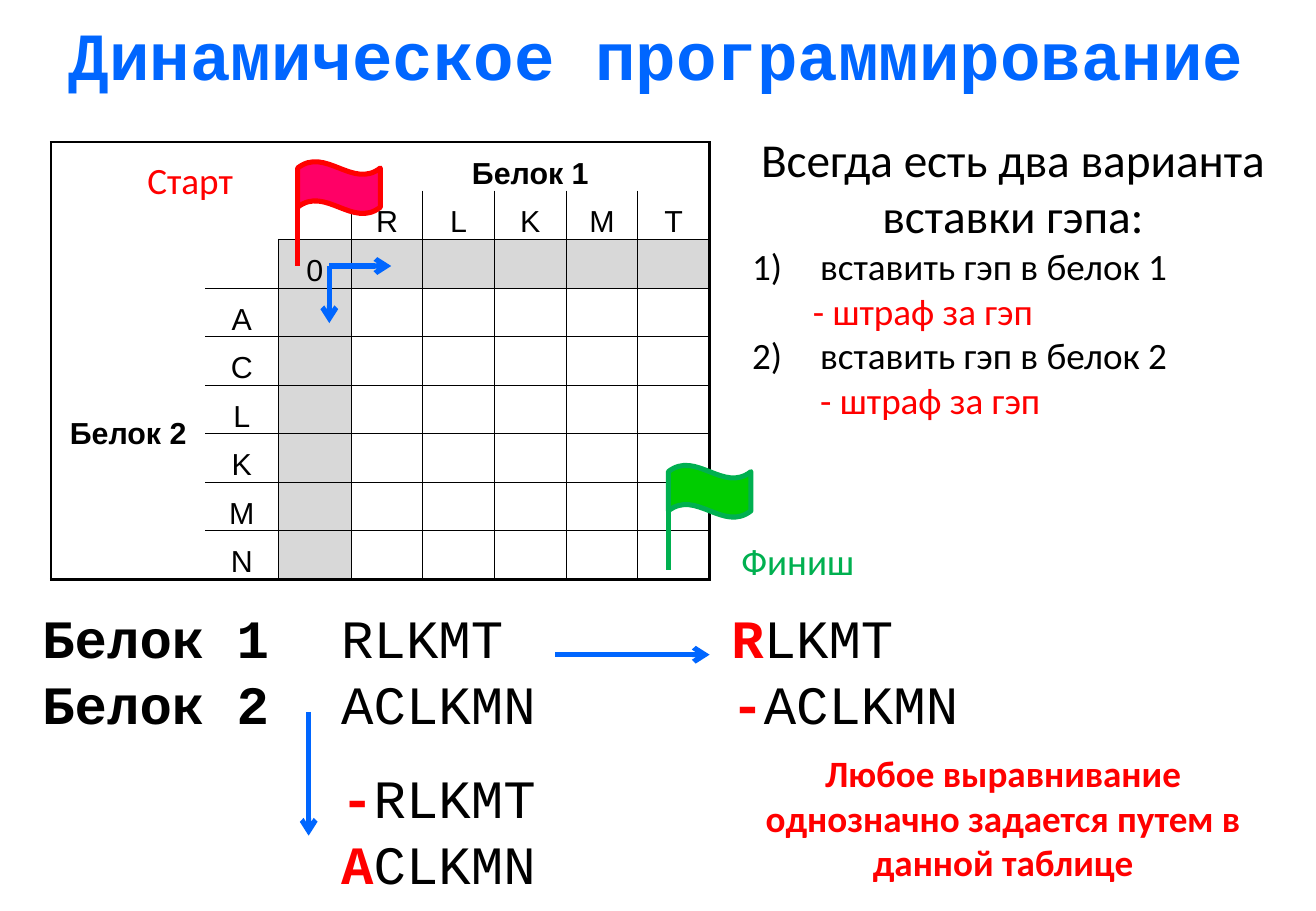
from lxml import etree
from pptx import Presentation
from pptx.dml.color import RGBColor
from pptx.enum.shapes import MSO_CONNECTOR, MSO_SHAPE
from pptx.enum.text import MSO_ANCHOR, MSO_AUTO_SIZE, PP_ALIGN
from pptx.oxml.ns import qn
from pptx.util import Pt

PX = 9144  # EMU in one px, 100 px to the inch
LEFT, CENTER = PP_ALIGN.LEFT, PP_ALIGN.CENTER
TOP, MIDDLE, BOTTOM = MSO_ANCHOR.TOP, MSO_ANCHOR.MIDDLE, MSO_ANCHOR.BOTTOM
STRAIGHT, WAVE, NO_AUTOFIT = MSO_CONNECTOR.STRAIGHT, MSO_SHAPE.WAVE, MSO_AUTO_SIZE.NONE

BLACK, RED, BLUE, GREEN, GRAY = "000000", "FF0000", "0066FF", "00B050", "D8D8D8"
NO_STYLE = "{2D5ABB26-0587-4C30-8999-92F81FD0307C}"
MONO = {"name": "Courier New", "size": Pt(32)}
SANS = {"name": "Calibri", "size": Pt(22)}
CELL = {"name": "Arial", "size": Pt(18)}

PROTEIN_1, PROTEIN_2 = "RLKMT", "ACLKMN"
COL_WIDTHS = [127, 60, 60] + [59] * 5
ROW_HEIGHT, ROWS = 40, 9
LAST_ROW, LAST_COL = ROWS - 1, len(COL_WIDTHS) - 1


def px(*values):
    return [v * PX for v in values]


def rgb(value):
    return RGBColor.from_string(value)


def place(shape, box):
    shape.left, shape.top, shape.width, shape.height = px(*box)


def add_run(p, text, fmt, color=BLACK, bold=False):
    r = p.add_run()
    r.text = text
    for name, value in {**fmt, "bold": bold}.items():
        setattr(r.font, name, value)
    r.font.color.rgb = rgb(color)


def fill_text(tf, lines, fmt, align=LEFT, spacing=None):
    """Write lines, each a list of (text, color, bold) runs, into a frame."""
    for i, runs in enumerate(lines):
        p = tf.paragraphs[0] if i == 0 else tf.add_paragraph()
        p.alignment = align
        if spacing:
            p.line_spacing = spacing
        for run in runs:
            add_run(p, run[0], fmt, *run[1:])


def add_text(s, box, lines, fmt, align=LEFT, spacing=None):
    tf = s.shapes.add_textbox(*px(*box)).text_frame
    tf.word_wrap = True
    fill_text(tf, lines, fmt, align, spacing)


def add_sequences(s, box, lines):
    add_text(s, box, lines, MONO, spacing=Pt(39))


def add_line(shapes, start, end, color, arrow=False):
    line = shapes.add_connector(STRAIGHT, *px(*start, *end))
    line.line.color.rgb = rgb(color)
    line.line.width = Pt(3)
    if arrow:
        etree.SubElement(line.line._get_or_add_ln(), qn("a:tailEnd"), type="arrow")
    etree.SubElement(line._element.spPr, qn("a:effectLst"))


def add_flag(s, x, y, color, fill):
    group = s.shapes.add_group_shape()
    add_line(group.shapes, (x, y + 6), (x, y + 86), color)
    flag = group.shapes.add_shape(WAVE, *px(x, y, 68, 43))
    flag.shadow.inherit = False
    flag.fill.solid()
    flag.fill.fore_color.rgb = rgb(fill)
    flag.line.color.rgb = rgb(color)
    flag.line.width = Pt(3)


def is_ruled(row, col):
    """Tell whether a cell has thin lines at its right and bottom."""
    return (row >= 1 and col >= 2) or (row >= 2 and col == 1)


def set_borders(cell, row, col):
    end_row = row + cell.span_height - 1
    end_col = col + cell.span_width - 1
    ruled = is_ruled(row, col)
    edges = {
        "a:lnL": (col == 0, is_ruled(row, col - 1)),
        "a:lnR": (end_col == LAST_COL, ruled),
        "a:lnT": (row == 0, is_ruled(row - 1, col)),
        "a:lnB": (end_row == LAST_ROW, ruled),
    }
    tc_pr = cell._tc.get_or_add_tcPr()
    for tag, (outer, inner) in edges.items():
        width = Pt(1.5) if outer else Pt(0.5)
        ln = etree.SubElement(tc_pr, qn(tag), w=str(int(width)))
        if outer or inner:
            fill = etree.SubElement(ln, qn("a:solidFill"))
            etree.SubElement(fill, qn("a:srgbClr"), val=BLACK)
        else:
            etree.SubElement(ln, qn("a:noFill"))


def add_matrix(s):
    """Add the alignment matrix of the two proteins."""
    box = px(42, 117, sum(COL_WIDTHS), ROW_HEIGHT * ROWS)
    table = s.shapes.add_table(ROWS, len(COL_WIDTHS), *box).table
    table.first_row = table.horz_banding = False
    table._tbl.tblPr.find(qn("a:tableStyleId")).text = NO_STYLE
    for column, width in zip(table.columns, COL_WIDTHS):
        column.width = width * PX
    for row in table.rows:
        row.height = ROW_HEIGHT * PX
    table.cell(0, 3).merge(table.cell(0, LAST_COL))
    table.cell(3, 0).merge(table.cell(LAST_ROW, 0))

    labels = {(0, 3): "Белок 1", (3, 0): "Белок 2", (2, 2): "0"}
    labels.update({(1, 3 + i): letter for i, letter in enumerate(PROTEIN_1)})
    labels.update({(3 + i, 1): letter for i, letter in enumerate(PROTEIN_2)})
    for row in range(ROWS):
        for col in range(len(COL_WIDTHS)):
            cell = table.cell(row, col)
            cell.margin_left = cell.margin_right = cell.margin_top = PX
            cell.margin_bottom = 0
            cell.vertical_anchor = MIDDLE if col == 0 else BOTTOM
            set_borders(cell, row, col)
            if (row == 2 and col >= 2) or (col == 2 and row >= 2):
                cell.fill.solid()
                cell.fill.fore_color.rgb = rgb(GRAY)
            else:
                cell.fill.background()
            text = labels.get((row, col))
            if text:
                fill_text(cell.text_frame, [[(text, BLACK, len(text) > 1)]], CELL, CENTER)


def fill_options(body):
    """Write the two ways to insert a gap as a numbered list."""
    place(body, (609, 102, 449, 252))
    tf = body.text_frame
    tf.auto_size = NO_AUTOFIT
    tf.vertical_anchor = TOP
    penalty = "- штраф за гэп"
    # text, size, color, left margin, number
    items = [
        ("Всегда есть два варианта вставки гэпа:", 28, BLACK, 0, None),
        ("вставить гэп в белок 1", 22, BLACK, 56, 1),
        (penalty, 22, RED, 50, None),
        ("вставить гэп в белок 2", 22, BLACK, 56, 2),
        (penalty, 22, RED, 56, None),
    ]
    for i, (text, size, color, margin, number) in enumerate(items):
        p = tf.paragraphs[0] if i == 0 else tf.add_paragraph()
        p.alignment = LEFT if i else CENTER
        p.space_before = Pt(0)
        p_pr = p._p.get_or_add_pPr()
        p_pr.set("marL", str(margin * PX))
        p_pr.set("indent", str(-margin * PX if number else 0))
        if number:
            etree.SubElement(p_pr, qn("a:buFont"), typeface="+mj-lt")
            etree.SubElement(p_pr, qn("a:buAutoNum"), type="arabicParenR", startAt=str(number))
        else:
            etree.SubElement(p_pr, qn("a:buNone"))
        add_run(p, text, {**SANS, "size": Pt(size)}, color)


def main():
    prs = Presentation()
    prs.slide_width, prs.slide_height = px(1083, 750)
    s = prs.slides.add_slide(prs.slide_layouts[1])
    title, body = s.placeholders

    place(title, (4, 5, 1071, 77))
    title.text_frame.auto_size = NO_AUTOFIT
    fill_text(title.text_frame, [[("Динамическое программирование", BLUE, True)]],
              {**MONO, "size": Pt(40)}, CENTER, Pt(49))
    fill_options(body)
    add_matrix(s)

    add_sequences(s, (25, 492, 237, 118),
                  [[("Белок 1", BLACK, True)], [("Белок 2", BLACK, True)]])
    add_sequences(s, (271, 492, 212, 118), [[(PROTEIN_1,)], [(PROTEIN_2,)]])
    add_sequences(s, (592, 492, 279, 118),
                  [[("R", RED, True), ("LKMT",)], [("-", RED, True), (PROTEIN_2,)]])
    add_sequences(s, (271, 624, 279, 118),
                  [[("-", RED, True), (PROTEIN_1,)], [("A", RED, True), ("CLKMN",)]])

    for start, end in [((271, 219), (322, 219)), ((271, 219), (271, 266)),
                       ((254, 586), (254, 688)), ((457, 539), (584, 539))]:
        add_line(s.shapes, start, end, BLUE, arrow=True)

    add_text(s, (76, 125, 161, 47), [[("Старт", RED)]], SANS, CENTER)
    add_text(s, (576, 438, 161, 47), [[("Финиш", GREEN)]], SANS, CENTER)
    add_flag(s, 550, 383, GREEN, "00CC00")
    add_flag(s, 245, 133, RED, "FF0066")
    conclusion = "Любое выравнивание однозначно задается путем в данной таблице"
    add_text(s, (601, 613, 449, 121), [[(conclusion, RED, True)]], SANS, CENTER)
    prs.save("out.pptx")


if __name__ == "__main__":
    main()
